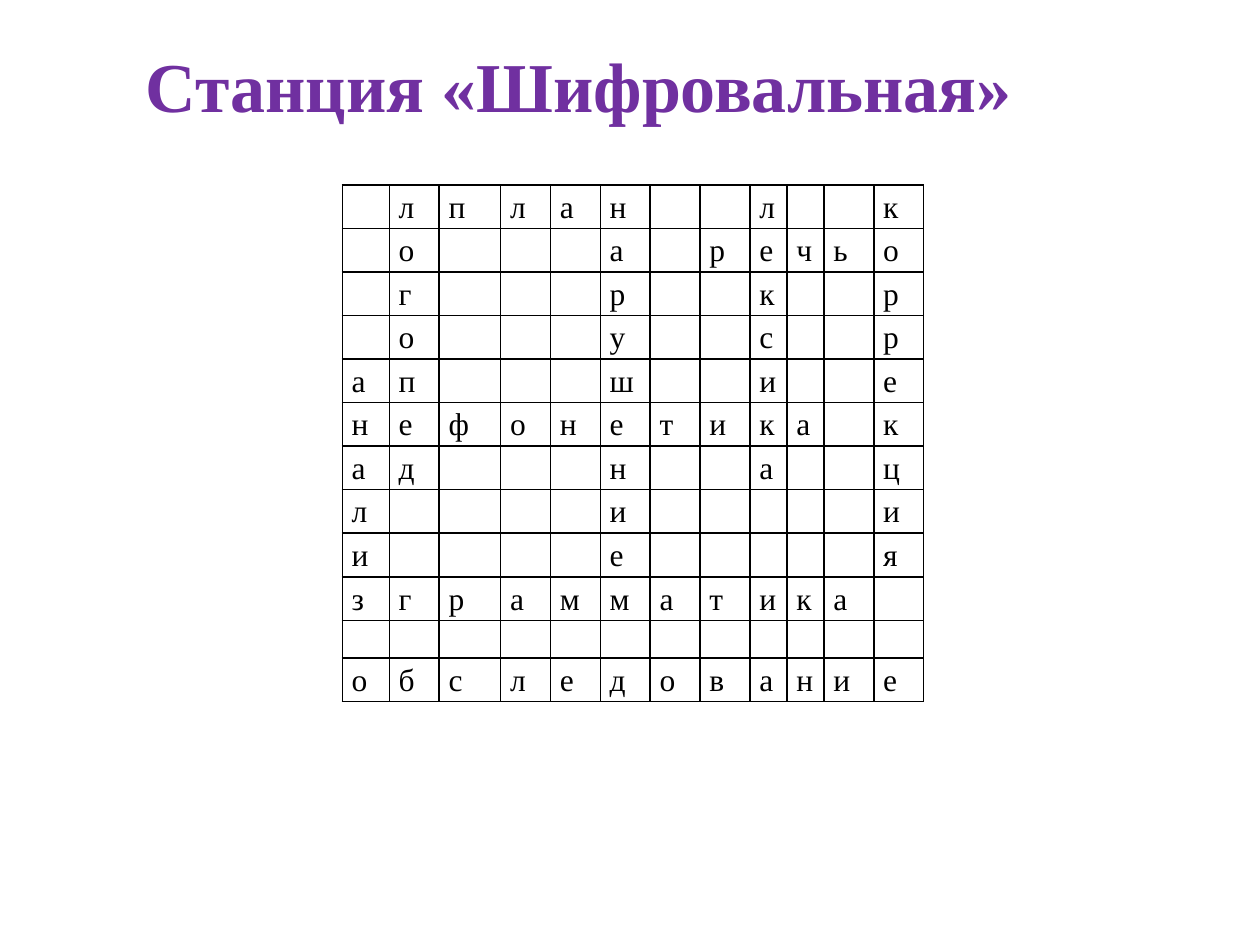
from lxml import etree
from pptx import Presentation
from pptx.dml.color import RGBColor
from pptx.enum import text
from pptx.oxml import ns
from pptx.util import Pt

TITLE = "Станция «Шифровальная»"
CROSSWORD = [
    ".план".replace(".", ".л") + "..л..к",
    ".о...а.речьо",
    ".г...р..к..р",
    ".о...у..с..р",
    "ап...ш..и..е",
    "нефонетика.к",
    "ад...н..а..ц",
    "л....и.....и",
    "и....е.....я",
    "зграмматика.",
    "............",
    "обследование",
]
CROSSWORD[0] = ".лплан..л..к"
EMPTY = "."
COLUMN_WIDTHS = [26.9, 28.5, 35.1] + [28.5] * 5 + [21.2] * 2 + [28.5] * 2
ROW_HEIGHT, BLANK_ROW_HEIGHT = 24.9, 21.4
FONT = "Times New Roman"


def set_font(para, size, color, bold=False):
    font = para.font
    font.name, font.size, font.bold = FONT, Pt(size), bold
    font.color.rgb = RGBColor.from_string(color)


def add_borders(cell, color, width):
    properties = cell._tc.get_or_add_tcPr()
    for position, side in enumerate(("lnL", "lnR", "lnT", "lnB")):
        line = etree.Element(ns.qn("a:" + side), w=str(Pt(width)))
        fill = etree.SubElement(line, ns.qn("a:solidFill"))
        etree.SubElement(fill, ns.qn("a:srgbClr"), val=color)
        properties.insert(position, line)


def add_title(page):
    box = page.shapes.add_textbox(Pt(76.3), Pt(20.9), Pt(538.6), Pt(55.4))
    frame = box.text_frame
    frame.word_wrap = True
    frame.auto_size = text.MSO_AUTO_SIZE.SHAPE_TO_FIT_TEXT
    para = frame.paragraphs[0]
    para.text = TITLE
    set_font(para, 40, "7030A0", True)


def fill_cell(cell, letter):
    cell.fill.background()
    cell.margin_left = cell.margin_right = Pt(5.4)
    cell.margin_top = cell.margin_bottom = 0
    para = cell.text_frame.paragraphs[0]
    if letter != EMPTY:
        para.text = letter
        para.line_spacing = 1.15
    set_font(para, 18, "000000")
    add_borders(cell, "000000", 1)


def add_crossword(page):
    heights = [ROW_HEIGHT if row.strip(EMPTY) else BLANK_ROW_HEIGHT for row in CROSSWORD]
    table = page.shapes.add_table(
        len(CROSSWORD), len(COLUMN_WIDTHS),
        Pt(195.6), Pt(105.6), Pt(sum(COLUMN_WIDTHS)), Pt(sum(heights)),
    ).table
    table.first_row = table.horz_banding = False
    for column, width in zip(table.columns, COLUMN_WIDTHS):
        column.width = Pt(width)
    for row, height, letters in zip(table.rows, heights, CROSSWORD):
        row.height = Pt(height)
        for cell, letter in zip(row.cells, letters):
            fill_cell(cell, letter)


def main():
    deck = Presentation()
    deck.slide_width, deck.slide_height = Pt(720), Pt(540)
    page = deck.slides.add_slide(deck.slide_layouts[6])
    add_title(page)
    add_crossword(page)
    deck.save("out.pptx")


if __name__ == "__main__":
    main()
